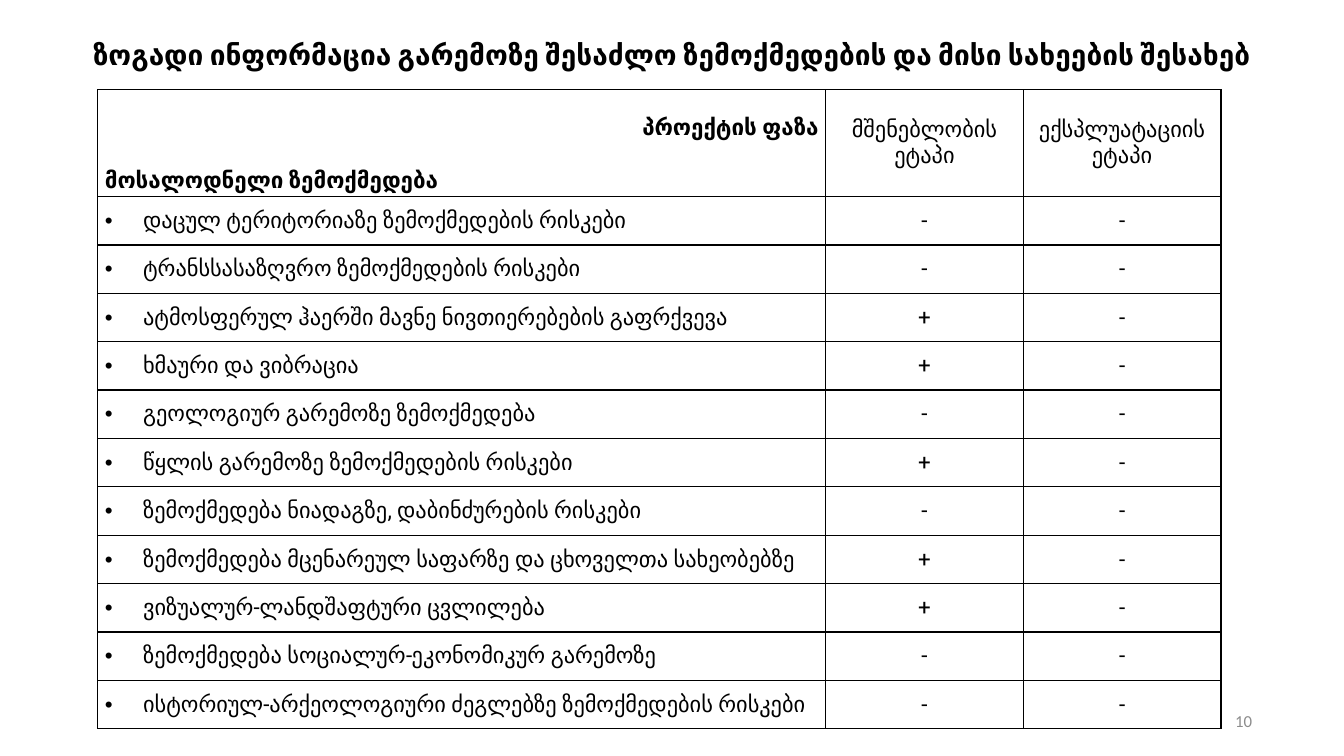
import pptx
import pptx.util
import pptx.dml.color
import pptx.enum.text
import pptx.oxml
import pptx.oxml.ns

ALIGN = pptx.enum.text.PP_ALIGN
ANCHOR = pptx.enum.text.MSO_ANCHOR
BLACK = "000000"
GREY = "8C8C8C"
PX = 9144  # 100 px to the inch


def px(count):
    return pptx.util.Emu(count * PX)


def colour(hex_code):
    return pptx.dml.color.RGBColor.from_string(hex_code)


def xml(tag, attributes="", inner=""):
    namespace = pptx.oxml.ns.nsdecls("a")
    return pptx.oxml.parse_xml(f"<a:{tag} {namespace} {attributes}>{inner}</a:{tag}>")


def write(paragraph, text, font="Roboto", size=16, color=BLACK, bold=False,
          align=ALIGN.LEFT, before=0, bullet_indent=0):
    run = paragraph.add_run()
    run.text = text
    run.font.name = font
    run.font.size = pptx.util.Pt(size)
    run.font.bold = bold
    run.font.color.rgb = colour(color)
    paragraph.alignment = align
    paragraph.space_before = pptx.util.Pt(before)
    if bullet_indent:
        properties = paragraph._p.get_or_add_pPr()
        properties.set("marL", str(px(bullet_indent)))
        properties.set("indent", str(-px(bullet_indent)))
        properties.append(xml("buFont", 'typeface="Arial"'))
        properties.append(xml("buChar", 'char="•"'))


class ImpactSlide:
    """Holds the table style and the current slide."""
    border_pt = 1
    side_margin = 7
    bullet_indent = 38

    def __init__(self, deck):
        self.slide = deck.slides.add_slide(deck.slide_layouts[5])

    def title(self, text, left, top, width, height):
        heading = self.slide.shapes.title
        heading.left, heading.top = px(left), px(top)
        heading.width, heading.height = px(width), px(height)
        frame = heading.text_frame
        frame.auto_size = pptx.enum.text.MSO_AUTO_SIZE.NONE
        frame.vertical_anchor = ANCHOR.TOP
        write(frame.paragraphs[0], text, font="Calibri", size=20, bold=True,
              align=ALIGN.CENTER)

    def page_number(self, text, left, top, width, height):
        frame = self.slide.shapes.add_textbox(
            px(left), px(top), px(width), px(height)).text_frame
        frame.word_wrap = True
        frame.margin_left = frame.margin_right = 0
        frame.vertical_anchor = ANCHOR.MIDDLE
        write(frame.paragraphs[0], text, font="Calibri", size=12, color=GREY,
              align=ALIGN.RIGHT)

    def table(self, left, top, columns, rows):
        grid = self.slide.shapes.add_table(
            len(rows), len(columns), px(left), px(top),
            px(sum(columns)), px(sum(rows))).table
        grid.first_row = grid.horz_banding = False
        for column, width in zip(grid.columns, columns):
            column.width = px(width)
        for row, height in zip(grid.rows, rows):
            row.height = px(height)
        for cell in grid.iter_cells():
            self.frame_cell(cell)
        return grid

    def frame_cell(self, cell):
        cell.margin_left = cell.margin_right = px(self.side_margin)
        cell.margin_top = cell.margin_bottom = 0
        cell.vertical_anchor = ANCHOR.MIDDLE
        properties = cell._tc.get_or_add_tcPr()
        for side in ("lnL", "lnR", "lnT", "lnB"):
            properties.append(xml(
                side, f'w="{pptx.util.Pt(self.border_pt)}"',
                f'<a:solidFill><a:srgbClr val="{BLACK}"/></a:solidFill>'))
        cell.fill.background()

    def corner(self, cell, phase, impact):
        cell.vertical_anchor = ANCHOR.BOTTOM
        cell.margin_bottom = px(3)
        frame = cell.text_frame
        write(frame.paragraphs[0], phase, bold=True, align=ALIGN.RIGHT)
        write(frame.add_paragraph(), impact, bold=True, before=18.7)

    def centred(self, cell, text):
        write(cell.text_frame.paragraphs[0], text, align=ALIGN.CENTER)

    def bulleted(self, cell, text):
        write(cell.text_frame.paragraphs[0], text, bullet_indent=self.bullet_indent)


STAGES = ["მშენებლობის ეტაპი", "ექსპლუატაციის ეტაპი"]
# Each impact with its marks for construction and operation
IMPACTS = [
    ("დაცულ ტერიტორიაზე ზემოქმედების რისკები", "--"),
    ("ტრანსსასაზღვრო ზემოქმედების რისკები", "--"),
    ("ატმოსფერულ ჰაერში მავნე ნივთიერებების გაფრქვევა", "+-"),
    ("ხმაური და ვიბრაცია", "+-"),
    ("გეოლოგიურ გარემოზე ზემოქმედება", "--"),
    ("წყლის გარემოზე ზემოქმედების რისკები", "+-"),
    ("ზემოქმედება ნიადაგზე, დაბინძურების რისკები", "--"),
    ("ზემოქმედება მცენარეულ საფარზე და ცხოველთა სახეობებზე", "+-"),
    ("ვიზუალურ-ლანდშაფტური ცვლილება", "+-"),
    ("ზემოქმედება სოციალურ-ეკონომიკურ გარემოზე", "--"),
    ("ისტორიულ-არქეოლოგიური ძეგლებზე ზემოქმედების რისკები", "--"),
]


def main():
    deck = pptx.Presentation()
    deck.slide_width, deck.slide_height = px(1333), px(750)
    page = ImpactSlide(deck)

    # Page number and title
    page.page_number("10", 942, 695, 300, 40)
    page.title("ზოგადი ინფორმაცია გარემოზე შესაძლო ზემოქმედების და მისი სახეების შესახებ",
               0, 32, 1333, 44)

    # Table header
    matrix = page.table(97, 89, [722, 196, 196], [106] + [48] * len(IMPACTS))
    page.corner(matrix.cell(0, 0), "პროექტის ფაზა", "მოსალოდნელი ზემოქმედება")
    for column, stage in enumerate(STAGES, 1):
        page.centred(matrix.cell(0, column), stage)

    # One row for each impact
    for row, (impact, marks) in enumerate(IMPACTS, 1):
        page.bulleted(matrix.cell(row, 0), impact)
        for column, mark in enumerate(marks, 1):
            page.centred(matrix.cell(row, column), mark)

    deck.save("out.pptx")


if __name__ == "__main__":
    main()
